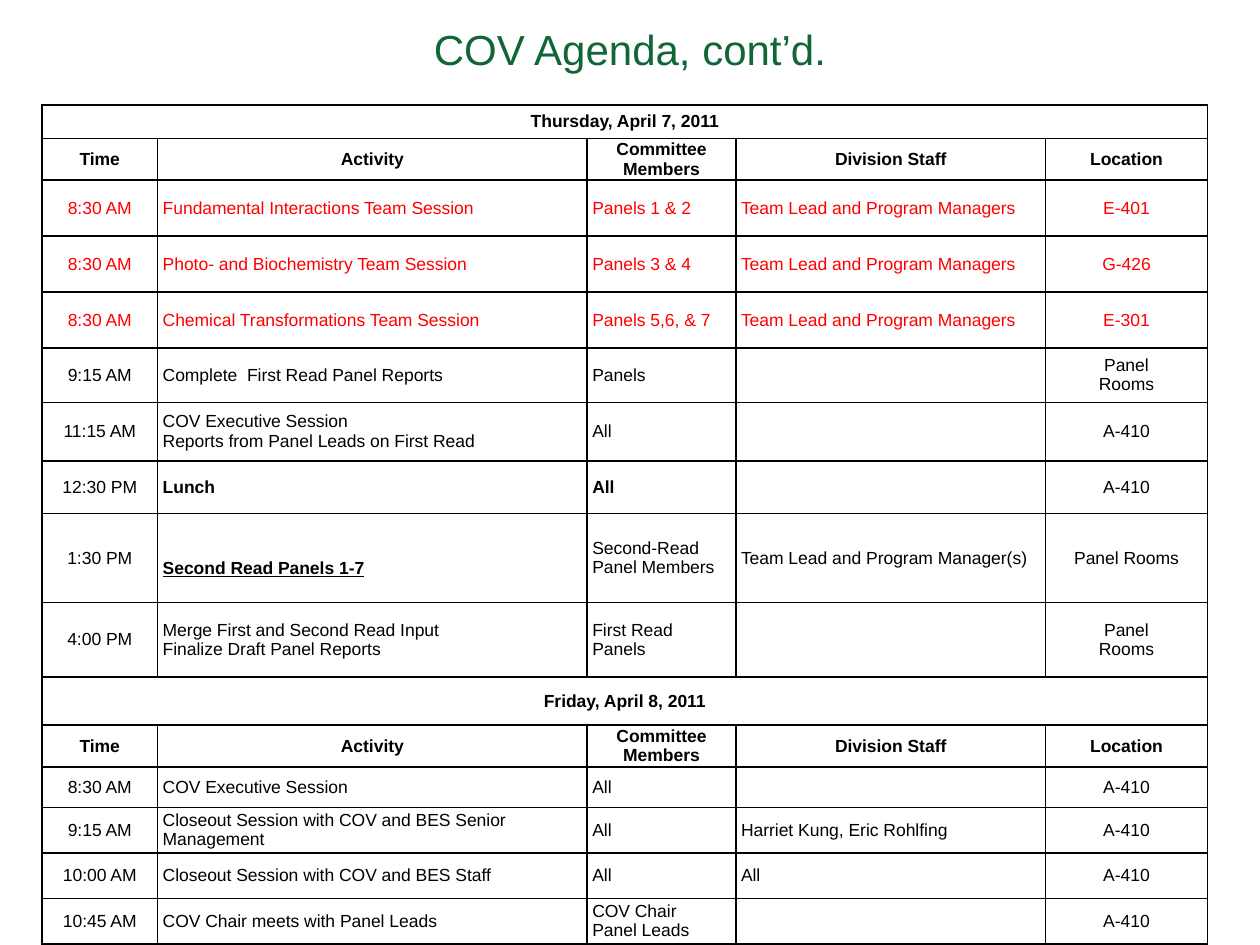
import pptx
import pptx.dml.color
import pptx.enum.text
import pptx.oxml
import pptx.oxml.ns
import pptx.util

Pt = pptx.util.Pt
RGBColor = pptx.dml.color.RGBColor
ALIGN = pptx.enum.text.PP_ALIGN
MIDDLE = pptx.enum.text.MSO_ANCHOR.MIDDLE

GREEN = RGBColor(0x10, 0x66, 0x36)
RED = RGBColor(0xFF, 0x00, 0x00)
BLACK = RGBColor(0x00, 0x00, 0x00)
WHITE = RGBColor(0xFF, 0xFF, 0xFF)

COL_WIDTHS = [66, 245.5, 85, 177, 92.5]
ROW_HEIGHTS = [19, 24, 32, 32, 32, 31, 33.5, 30, 51, 42.5, 27.5, 24, 23, 26, 26, 26]
CENTERED_COLS = (0, 4)
HEADER = ["Time", "Activity", "Committee Members", "Division Staff", "Location"]
LEADS = "Team Lead and Program Managers"
THURSDAY = [
    ["8:30 AM", "Fundamental Interactions Team Session", "Panels 1 & 2", LEADS, "E-401"],
    ["8:30 AM", "Photo- and Biochemistry Team Session", "Panels 3 & 4", LEADS, "G-426"],
    ["8:30 AM", "Chemical Transformations Team Session", "Panels 5,6, & 7", LEADS, "E-301"],
    ["9:15 AM", "Complete  First Read Panel Reports", "Panels", "", "Panel\nRooms"],
    ["11:15 AM", "COV Executive Session\nReports from Panel Leads on First Read", "All", "", "A-410"],
    ["12:30 PM", "Lunch", "All", "", "A-410"],
    ["1:30 PM", "Second Read Panels 1-7", "Second-Read Panel Members",
     "Team Lead and Program Manager(s)", "Panel Rooms"],
    ["4:00 PM", "Merge First and Second Read Input\nFinalize Draft Panel Reports",
     "First Read Panels", "", "Panel\nRooms"],
]
FRIDAY = [
    ["8:30 AM", "COV Executive Session", "All", "", "A-410"],
    ["9:15 AM", "Closeout Session with COV and BES Senior Management", "All",
     "Harriet Kung, Eric Rohlfing", "A-410"],
    ["10:00 AM", "Closeout Session with COV and BES Staff", "All", "All", "A-410"],
    ["10:45 AM", "COV Chair meets with Panel Leads", "COV Chair\nPanel Leads", "", "A-410"],
]
DAYS = [("Thursday, April 7, 2011", THURSDAY), ("Friday, April 8, 2011", FRIDAY)]


def write_text(tf, text, size=10, color=BLACK, bold=False, underline=False, align=ALIGN.LEFT):
    """Write one paragraph per line of text in the given format."""
    for i, line in enumerate(text.split("\n")):
        p = tf.paragraphs[0] if i == 0 else tf.add_paragraph()
        p.alignment = align
        p.font.size = Pt(size)
        if line:
            r = p.add_run()
            r.text = line
            r.font.name = "Arial"
            r.font.size = Pt(size)
            r.font.bold = bold
            r.font.underline = underline
            r.font.color.rgb = color


def add_borders(cell):
    """Draw a thin black line on all four sides of a cell."""
    tc_pr = cell._tc.get_or_add_tcPr()
    for i, side in enumerate(("lnL", "lnR", "lnT", "lnB")):
        tc_pr.insert(i, pptx.oxml.parse_xml(
            f'<a:{side} {pptx.oxml.ns.nsdecls("a")} w="{Pt(1)}"><a:solidFill>'
            f'<a:srgbClr val="{BLACK}"/></a:solidFill></a:{side}>'))


def format_cell(cell):
    """Give a cell its fill, margins, anchor and borders."""
    cell.fill.solid()
    cell.fill.fore_color.rgb = WHITE
    cell.margin_left = cell.margin_right = Pt(3)
    cell.margin_top = cell.margin_bottom = 0
    cell.vertical_anchor = MIDDLE
    add_borders(cell)


def fill_day(table, top, day, sessions):
    """Write a day's banner, header and sessions; return the next free row."""
    banner = table.cell(top, 0)
    banner.merge(table.cell(top, len(HEADER) - 1))
    write_text(banner.text_frame, day, bold=True, align=ALIGN.CENTER)
    for col, label in enumerate(HEADER):
        write_text(table.cell(top + 1, col).text_frame, label, bold=True, align=ALIGN.CENTER)
    for row, session in enumerate(sessions, top + 2):
        activity = session[1]
        for col, text in enumerate(session):
            second_read = text.startswith("Second Read")
            cell = table.cell(row, col)
            if second_read:
                cell.margin_top = Pt(11.5)
            write_text(
                cell.text_frame, text,
                color=RED if activity.endswith("Team Session") else BLACK,
                bold=second_read or (activity == "Lunch" and col in (1, 2)),
                underline=second_read,
                align=ALIGN.CENTER if col in CENTERED_COLS else ALIGN.LEFT)
    return top + 2 + len(sessions)


def add_agenda(s):
    """Add the agenda table with both days."""
    table = s.shapes.add_table(
        len(ROW_HEIGHTS), len(COL_WIDTHS), Pt(24), Pt(60),
        Pt(sum(COL_WIDTHS)), Pt(sum(ROW_HEIGHTS))).table
    table.first_row = table.horz_banding = False
    for column, width in zip(table.columns, COL_WIDTHS):
        column.width = Pt(width)
    for row, height in zip(table.rows, ROW_HEIGHTS):
        row.height = Pt(height)
    for cell in table.iter_cells():
        format_cell(cell)
    top = 0
    for day, sessions in DAYS:
        top = fill_day(table, top, day, sessions)


def add_title(s, text):
    """Place and format the title placeholder."""
    sp = s.shapes.title
    sp.left, sp.top, sp.width, sp.height = Pt(0), Pt(-17), Pt(720), Pt(90)
    tf = sp.text_frame
    tf.word_wrap = True
    tf.auto_size = pptx.enum.text.MSO_AUTO_SIZE.NONE
    tf.vertical_anchor = MIDDLE
    write_text(tf, text, size=24, color=GREEN, align=ALIGN.CENTER)


def main():
    """Build the agenda slide and save it."""
    prs = pptx.Presentation()
    prs.slide_width, prs.slide_height = Pt(720), Pt(540)
    s = prs.slides.add_slide(prs.slide_layouts[5])
    add_title(s, "COV Agenda, cont’d.")
    add_agenda(s)
    prs.save("out.pptx")


if __name__ == "__main__":
    main()
